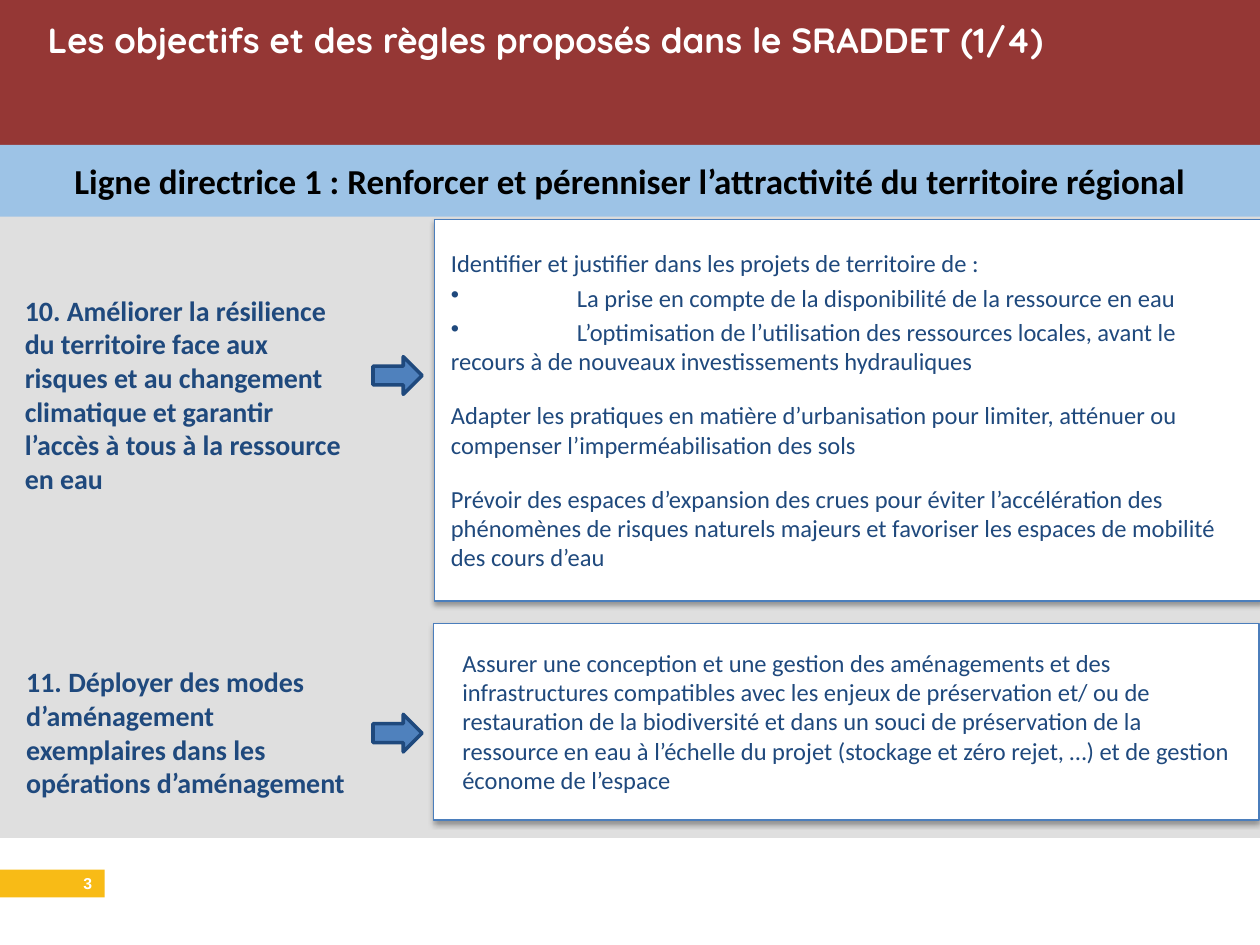
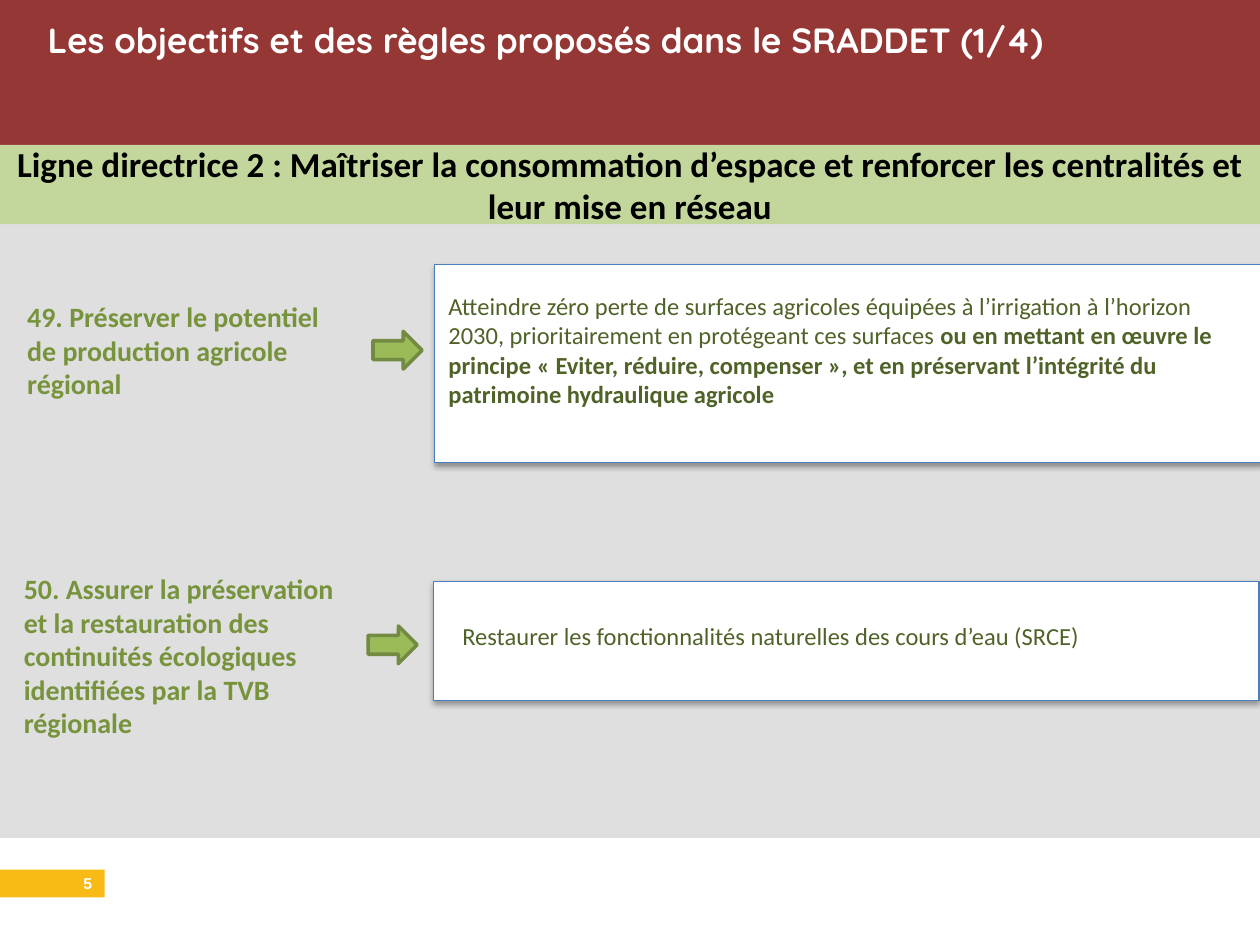
from lxml import etree
from pptx import Presentation
from pptx.dml.color import RGBColor
from pptx.enum.shapes import MSO_SHAPE
from pptx.enum.text import MSO_ANCHOR, PP_ALIGN
from pptx.oxml.ns import qn
from pptx.util import Cm, Pt

RECT, ARROW = MSO_SHAPE.RECTANGLE, MSO_SHAPE.RIGHT_ARROW
LEFT, CENTER, RIGHT = PP_ALIGN.LEFT, PP_ALIGN.CENTER, PP_ALIGN.RIGHT
TOP, MIDDLE = MSO_ANCHOR.TOP, MSO_ANCHOR.MIDDLE
rgb = RGBColor.from_string

# Shared look
WIDTH, HEIGHT = 25.4, 19.05
WHITE, BLACK, GREY = "FFFFFF", "000000", "DFDFDF"
HEADER, FOOTER, CARD_LINE = "953735", "F8BB16", "4B7EBC"
TITLE = "Les objectifs et des règles proposés dans le SRADDET (1/4)"
TAB = Cm(2.54)


def add_box(s, kind, at, fill, line=None, line_width=0.75):
    sp = s.shapes.add_shape(kind, *[Cm(v) for v in at])
    sp.shadow.inherit = False
    sp.fill.solid()
    sp.fill.fore_color.rgb = rgb(fill)
    if line:
        sp.line.color.rgb = rgb(line)
        sp.line.width = Pt(line_width)
    else:
        sp.line.fill.background()
    return sp


def write(sp, paragraphs, size, color, bold=False, font="Calibri", align=LEFT, anchor=TOP):
    """Each paragraph is (space before, text, optional bold ending); a leading tab means a bullet."""
    tf = sp.text_frame
    tf.word_wrap = True
    tf.vertical_anchor = anchor
    for i, (space, text, *bold_end) in enumerate(paragraphs):
        p = tf.paragraphs[0] if i == 0 else tf.add_paragraph()
        p.text = text
        p.alignment = align
        p.space_before = Pt(space)
        if text.startswith("\t"):
            pPr = p._p.get_or_add_pPr()
            pPr.set("marL", "0")
            pPr.set("indent", "0")
            etree.SubElement(pPr, qn("a:buChar"), char="•")
            tabs = etree.SubElement(pPr, qn("a:tabLst"))
            etree.SubElement(tabs, qn("a:tab"), pos=str(TAB), algn="l")
        for ending in bold_end:
            p.add_run().text = ending
        for n, r in enumerate(p.runs):
            r.font.name = font
            r.font.size = Pt(size)
            r.font.bold = bold or n > 0
            r.font.color.rgb = rgb(color)


# Content: each row is a label, an arrow and a card with its text
slides = [
    dict(
        number="3", band="9DC3E6", band_height=1.45,
        guideline="Ligne directrice 1 : Renforcer et pérenniser l’attractivité du territoire régional",
        label_color="1F497D", body_color="1F497D", arrow_fill="4F81BD", arrow_line="1F497D",
        rows=[
            dict(
                label="10. Améliorer la résilience du territoire face aux risques et au changement "
                      "climatique et garantir l’accès à tous à la ressource en eau",
                label_at=(0.25, 5.79, 6.96, 4.37), arrow_at=(7.52, 7.19),
                card_at=(8.76, 4.42, 16.69, 7.7), body_at=(8.84, 4.88, 16.08, 7.04),
                body=[
                    (0, "Identifier et justifier dans les projets de territoire de :"),
                    (2.8, "\tLa prise en compte de la disponibilité de la ressource en eau"),
                    (2.8, "\tL’optimisation de l’utilisation des ressources locales, avant le "
                          "recours à de nouveaux investissements hydrauliques"),
                    (14, "Adapter les pratiques en matière d’urbanisation pour limiter, atténuer "
                         "ou compenser l’imperméabilisation des sols"),
                    (14, "Prévoir des espaces d’expansion des crues pour éviter l’accélération des "
                         "phénomènes de risques naturels majeurs et favoriser les espaces de "
                         "mobilité des cours d’eau"),
                ]),
            dict(
                label="11. Déployer des modes d’aménagement exemplaires dans les opérations "
                      "d’aménagement",
                label_at=(0.28, 13.28, 7.16, 3), arrow_at=(7.52, 14.4),
                card_at=(8.74, 12.57, 16.64, 3.96), body_at=(9.07, 12.93, 16.08, 3.25),
                body=[
                    (0, "Assurer une conception et une gestion des aménagements et des "
                        "infrastructures compatibles avec les enjeux de préservation et/ ou de "
                        "restauration de la biodiversité et dans un souci de préservation de la "
                        "ressource en eau à l’échelle du projet (stockage et zéro rejet, …) et de "
                        "gestion économe de l’espace"),
                ]),
        ]),
    dict(
        number="5", band="C3D69B", band_height=1.6,
        guideline="Ligne directrice 2 : Maîtriser la consommation d’espace et renforcer les "
                  "centralités et leur mise en réseau",
        label_color="77933C", body_color="4F6228", arrow_fill="9BBB59", arrow_line="738A42",
        rows=[
            dict(
                label="49. Préserver le potentiel de production agricole régional",
                label_at=(0.3, 5.92, 6.96, 2.31), arrow_at=(7.52, 6.68),
                card_at=(8.76, 5.33, 16.69, 3.99), body_at=(8.79, 5.74, 16.08, 2.64),
                body=[
                    (0, "Atteindre zéro perte de surfaces agricoles équipées à l’irrigation à "
                        "l’horizon 2030, prioritairement en protégeant ces surfaces ",
                     "ou en mettant en œuvre le principe « Eviter, réduire, compenser », et en "
                     "préservant l’intégrité du patrimoine hydraulique agricole"),
                ]),
            dict(
                label="50. Assurer la préservation et la restauration des continuités écologiques "
                      "identifiées par la TVB régionale",
                label_at=(0.23, 11.4, 7.16, 3.68), arrow_at=(7.42, 12.62),
                card_at=(8.74, 11.73, 16.64, 2.39), body_at=(9.07, 12.4, 16.08, 0.86),
                body=[(0, "Restaurer les fonctionnalités naturelles des cours d’eau (SRCE)")]),
        ]),
]

prs = Presentation()
prs.slide_width, prs.slide_height = Cm(WIDTH), Cm(HEIGHT)

for content in slides:
    s = prs.slides.add_slide(prs.slide_layouts[6])

    # Background, header and title
    add_box(s, RECT, (0, 0, WIDTH, 16.89), GREY)
    add_box(s, RECT, (0, 0, WIDTH, 3.45), HEADER)
    title = s.shapes.add_textbox(Cm(0.71), Cm(0.25), Cm(24.05), Cm(2.16))
    write(title, [(0, TITLE)], 20, WHITE, bold=True, font="Quicksand")

    # Guideline band
    band = add_box(s, RECT, (0, 2.92, WIDTH, content["band_height"]), content["band"])
    write(band, [(0, content["guideline"])], 20, BLACK, bold=True, align=CENTER, anchor=MIDDLE)

    # Objectives and their rules
    for row in content["rows"]:
        label = s.shapes.add_textbox(*[Cm(v) for v in row["label_at"]])
        write(label, [(0, row["label"])], 16, content["label_color"], bold=True)
        add_box(s, ARROW, (*row["arrow_at"], 0.99, 0.76),
                content["arrow_fill"], content["arrow_line"], 2)

        card = add_box(s, RECT, row["card_at"], WHITE, CARD_LINE)
        effects = card._element.spPr.find(qn("a:effectLst"))
        shadow = etree.SubElement(effects, qn("a:outerShdw"), blurRad=str(Pt(3.1)),
                                  dist=str(Pt(1.8)), dir="5400000", rotWithShape="0")
        shade = etree.SubElement(shadow, qn("a:srgbClr"), val=BLACK)
        etree.SubElement(shade, qn("a:alpha"), val="35000")

        body = s.shapes.add_textbox(*[Cm(v) for v in row["body_at"]])
        write(body, row["body"], 14, content["body_color"])

    # Footer with the page number
    footer = add_box(s, RECT, (0, 17.53, 2.11, 0.56), FOOTER)
    footer.text_frame.margin_top = footer.text_frame.margin_bottom = 0
    write(footer, [(0, content["number"])], 9, WHITE, bold=True, font="Arial",
          align=RIGHT, anchor=MIDDLE)

prs.save("out.pptx")
